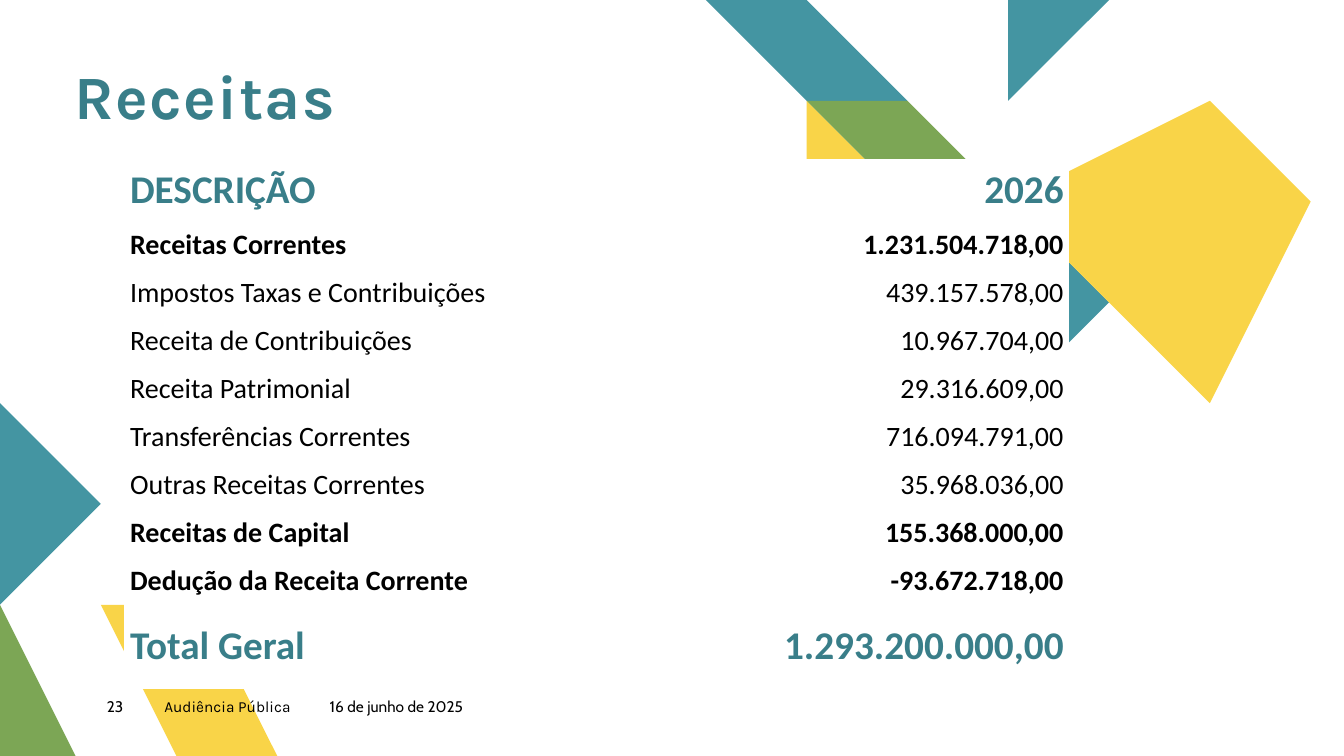
from dataclasses import dataclass

from pptx import Presentation
from pptx.dml.color import RGBColor
from pptx.enum.text import MSO_ANCHOR, MSO_AUTO_SIZE, PP_ALIGN
from pptx.util import Inches, Pt

LEFT, RIGHT = PP_ALIGN.LEFT, PP_ALIGN.RIGHT
TOP, MIDDLE, BOTTOM = MSO_ANCHOR.TOP, MSO_ANCHOR.MIDDLE, MSO_ANCHOR.BOTTOM
NO_AUTOFIT = MSO_AUTO_SIZE.NONE
TITLE_ONLY_LAYOUT = 5
UNITS_PER_INCH = 914400

COLORS = {
    "teal": "4495A2",
    "heading": "397E89",
    "yellow": "F9D448",
    "green": "7CA655",
    "white": "FFFFFF",
    "black": "000000",
}

Contour = list[tuple[float, float]]


@dataclass
class Ornament:
    color: str
    contours: list[Contour]


@dataclass
class FooterItem:
    text: str
    left: float
    width: float
    font: str


@dataclass
class RevenueRow:
    label: str
    amount: str
    bold: bool = False
    highlight: bool = False


ORNAMENTS = [
    Ornament("yellow", [[(3.24, 7.5), (2.15, 7.5), (1.06, 6.41), (1.61, 5.87)]]),
    Ornament("green", [[(1.06, 7.5), (0, 7.5), (0, 6.44)]]),
    Ornament("teal", [[(0, 4.27), (1.06, 5.33), (0, 6.39)]]),
    Ornament("teal", [
        [(9.08, 0.7), (8.38, 0), (6.96, 0), (8.37, 1.41)],
        [(11.21, 2.83), (10.5, 2.12), (9.79, 2.83), (10.5, 3.54)],
    ]),
    Ornament("yellow", [[(8.37, 1.41), (7.66, 2.12), (9.08, 3.54), (9.79, 2.83)]]),
    Ornament("teal", [[(11.2, 0), (9.79, 0), (10.5, 0.7)]]),
    Ornament("green", [[(9.08, 0.7), (8.37, 1.41), (9.79, 2.83), (10.5, 2.12)]]),
    Ornament("yellow", [[(13.33, 2.12), (11.91, 0.7), (10.5, 2.12), (11.91, 3.54)]]),
]

FOOTER = [
    FooterItem("23", 1.06, 0.57, "Cabin"),
    FooterItem("Audiência Pública", 1.63, 1.64, "Karla"),
    FooterItem("16 de junho de 2025", 3.27, 1.9, "Cabin"),
]

REVENUES = [
    RevenueRow("DESCRIÇÃO", "2026", True, True),
    RevenueRow("Receitas Correntes", "1.231.504.718,00", True),
    RevenueRow("Impostos Taxas e Contribuições", "439.157.578,00"),
    RevenueRow("Receita de Contribuições", "10.967.704,00"),
    RevenueRow("Receita Patrimonial", "29.316.609,00"),
    RevenueRow("Transferências Correntes", "716.094.791,00"),
    RevenueRow("Outras Receitas Correntes", "35.968.036,00"),
    RevenueRow("Receitas de Capital", "155.368.000,00", True),
    RevenueRow("Dedução da Receita Corrente", "-93.672.718,00", True),
    RevenueRow("Total Geral", "1.293.200.000,00", True, True),
]

COLUMN_WIDTHS = [5.72, 3.64]
TABLE_HEIGHT = 5.25
HEADER_HEIGHT = 0.61
TOTAL_HEIGHT = 0.83
CELL_MARGIN = Inches(0.05)


def rgb(name: str) -> RGBColor:
    return RGBColor.from_string(COLORS[name])


def format_paragraph(para, font: str, size: float, color: str,
                     bold: bool = False, align=LEFT) -> None:
    para.alignment = align
    para.font.name = font
    para.font.size = Pt(size)
    para.font.bold = bold
    para.font.color.rgb = rgb(color)


def format_frame(frame, anchor) -> None:
    frame.margin_left = frame.margin_right = 0
    frame.margin_top = frame.margin_bottom = 0
    frame.word_wrap = True
    frame.auto_size = NO_AUTOFIT
    frame.vertical_anchor = anchor


def draw_ornament(page, ornament: Ornament) -> None:
    first, *others = ornament.contours
    builder = page.shapes.build_freeform(*first[0], scale=UNITS_PER_INCH)
    builder.add_line_segments(first[1:], close=True)
    for contour in others:
        builder.move_to(*contour[0])
        builder.add_line_segments(contour[1:], close=True)
    shape = builder.convert_to_shape()
    shape.shadow.inherit = False
    shape.fill.solid()
    shape.fill.fore_color.rgb = rgb(ornament.color)
    shape.line.fill.background()


def draw_footer_item(page, item: FooterItem) -> None:
    box = page.shapes.add_textbox(
        Inches(item.left), Inches(6.92), Inches(item.width), Inches(0.27))
    format_frame(box.text_frame, TOP)
    para = box.text_frame.paragraphs[0]
    para.text = item.text
    format_paragraph(para, item.font, 11, "black")


def fill_cell(cell, text: str, row: RevenueRow, align) -> None:
    cell.fill.solid()
    cell.fill.fore_color.rgb = rgb("white")
    cell.margin_left = cell.margin_right = CELL_MARGIN
    cell.margin_top = cell.margin_bottom = CELL_MARGIN
    cell.vertical_anchor = MIDDLE
    size, color = (28, "heading") if row.highlight else (20, "black")
    para = cell.text_frame.paragraphs[0]
    para.text = text
    format_paragraph(para, "Calibri", size, color, row.bold, align)


def draw_revenue_table(page) -> None:
    table = page.shapes.add_table(
        len(REVENUES), len(COLUMN_WIDTHS), Inches(1.24), Inches(1.58),
        Inches(sum(COLUMN_WIDTHS)), Inches(TABLE_HEIGHT)).table
    table.first_row = False
    table.horz_banding = False
    for column, width in zip(table.columns, COLUMN_WIDTHS):
        column.width = Inches(width)
    item_count = len(REVENUES) - 2
    item_height = (TABLE_HEIGHT - HEADER_HEIGHT - TOTAL_HEIGHT) / item_count
    heights = [HEADER_HEIGHT, *[item_height] * item_count, TOTAL_HEIGHT]
    for table_row, height, revenue in zip(table.rows, heights, REVENUES):
        table_row.height = Inches(height)
        label_cell, amount_cell = table_row.cells
        fill_cell(label_cell, revenue.label, revenue, LEFT)
        fill_cell(amount_cell, revenue.amount, revenue, RIGHT)


def draw_title(page) -> None:
    title = page.shapes.title
    title.left, title.top = Inches(0.74), Inches(0.43)
    title.width, title.height = Inches(10.63), Inches(0.89)
    format_frame(title.text_frame, BOTTOM)
    para = title.text_frame.paragraphs[0]
    span = para.add_run()
    span.text = "Receitas"
    span._r.get_or_add_rPr().set("spc", "100")
    para.line_spacing = 0.9
    format_paragraph(para, "Karla", 44, "heading", True)


def main() -> None:
    deck = Presentation()
    deck.slide_width, deck.slide_height = Inches(13.33), Inches(7.5)
    page = deck.slides.add_slide(deck.slide_layouts[TITLE_ONLY_LAYOUT])
    for ornament in ORNAMENTS:
        draw_ornament(page, ornament)
    for item in FOOTER:
        draw_footer_item(page, item)
    draw_revenue_table(page)
    draw_title(page)
    deck.save("out.pptx")


if __name__ == "__main__":
    main()
